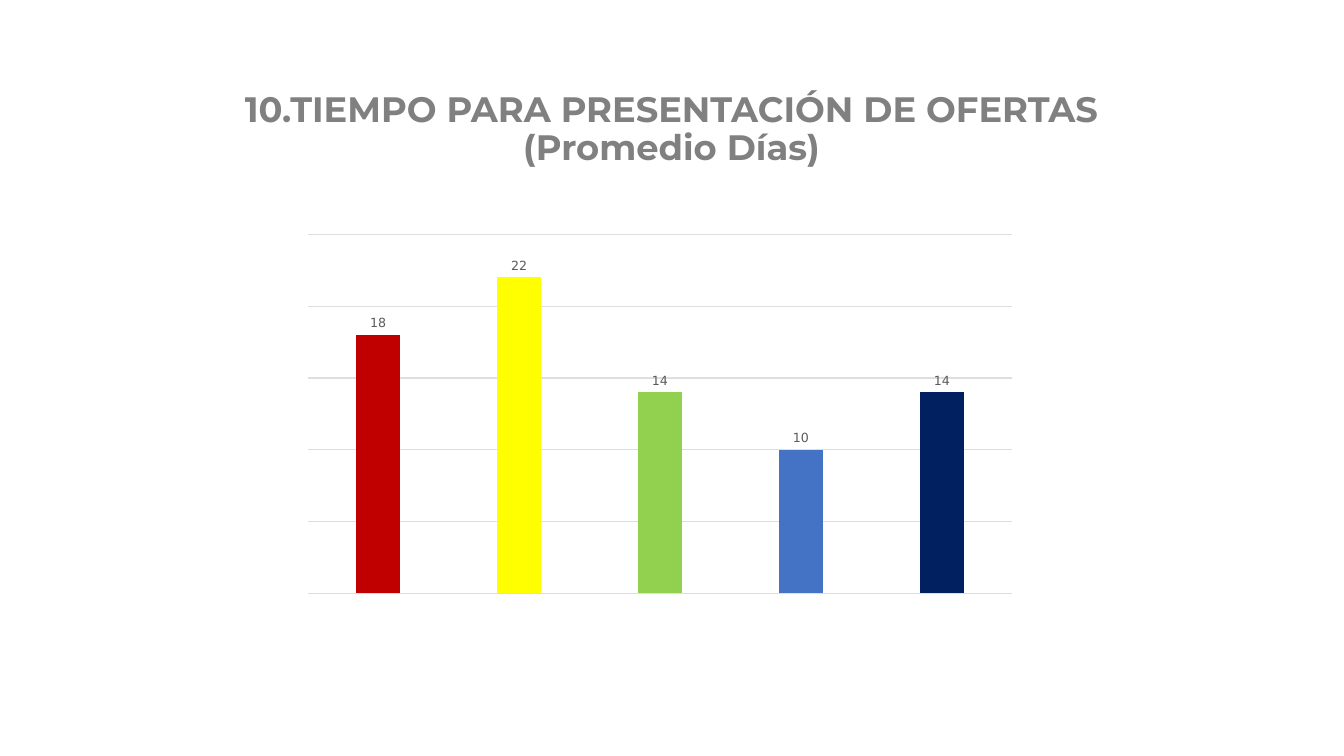
"""Build a slide with a column chart of average days for submitting offers."""
from lxml import etree
from pptx import Presentation
from pptx import util as u
from pptx.chart.data import CategoryChartData
from pptx.dml.color import RGBColor
from pptx.enum import chart as ch, text

PX = 914400 / 100.8
COLORS = {"title": "808080", "text": "262626", "label": "5C5C5C", "grid": "DEDEDE"}
BARS = {"1": (18, "C00000"), "2": (22, "FFFF00"), "3": (14, "92D050"),
        "4": (10, "4472C4"), "5": (14, "002060")}


def px(n):
    return u.Emu(round(n * PX))


def write(tf, content, *, size, color, font, bold=False, align=None, spacing=1.0):
    p = tf.paragraphs[0]
    p.alignment = align
    p.line_spacing = spacing
    r = p.add_run()
    r.text = content
    r.font.size = u.Pt(size)
    r.font.name = font
    r.font.bold = bold
    r.font.color.rgb = RGBColor.from_string(color)


prs = Presentation()
prs.slide_width, prs.slide_height = px(1344), px(756)
s = prs.slides.add_slide(prs.slide_layouts[5])

title = s.shapes.title
title.left, title.top, title.width, title.height = px(153), px(140), px(1037), px(71)
tf = title.text_frame
tf.word_wrap = True
tf.auto_size = text.MSO_AUTO_SIZE.NONE
tf.vertical_anchor = text.MSO_ANCHOR.BOTTOM
tf.margin_bottom = px(43)
write(tf, "10.TIEMPO PARA PRESENTACIÓN DE OFERTAS (Promedio Días)", size=25.2,
      color=COLORS["title"], font="Montserrat", bold=True,
      align=text.PP_ALIGN.CENTER, spacing=0.9)

data = CategoryChartData()
data.categories = list(BARS)
data.add_series("Series 1", [days for days, _ in BARS.values()])
chart = s.shapes.add_chart(ch.XL_CHART_TYPE.COLUMN_CLUSTERED,
                           px(293), px(227), px(734), px(374), data).chart
chart.has_legend = False
chart.has_title = False
chart.font.size = u.Pt(10)
chart.font.name = "DejaVu Sans"
chart.font.color.rgb = RGBColor.from_string(COLORS["text"])

chart.category_axis.visible = False
axis = chart.value_axis
axis.visible = False
axis.minimum_scale, axis.maximum_scale, axis.major_unit = 0, 25, 5
axis.has_major_gridlines = True
grid = axis.major_gridlines.format.line
grid.width = u.Pt(0.75)
grid.color.rgb = RGBColor.from_string(COLORS["grid"])

plot = chart.plots[0]
plot.gap_width, plot.overlap, plot.vary_by_categories = 219, -27, False
series = plot.series[0]
for i, (_, color) in enumerate(BARS.values()):
    fill = series.points[i].format.fill
    fill.solid()
    fill.fore_color.rgb = RGBColor.from_string(color)

labels = series.data_labels
labels.show_value = True
labels.position = ch.XL_LABEL_POSITION.OUTSIDE_END
labels.font.size = u.Pt(9)
labels.font.name = "DejaVu Sans"
labels.font.color.rgb = RGBColor.from_string(COLORS["label"])

C = "{http://schemas.openxmlformats.org/drawingml/2006/chart}"
area = chart.element.find(f".//{C}plotArea")
for old in area.findall(f"{C}layout"):
    area.remove(old)
layout = etree.Element(f"{C}layout")
area.insert(0, layout)
manual = etree.SubElement(layout, f"{C}manualLayout")
for tag, val in [("layoutTarget", "inner"), ("xMode", "edge"), ("yMode", "edge"),
                 ("x", 0.02), ("y", 0.02), ("w", 0.96), ("h", 0.96)]:
    etree.SubElement(manual, f"{C}{tag}", val=str(val))

prs.save("out.pptx")
